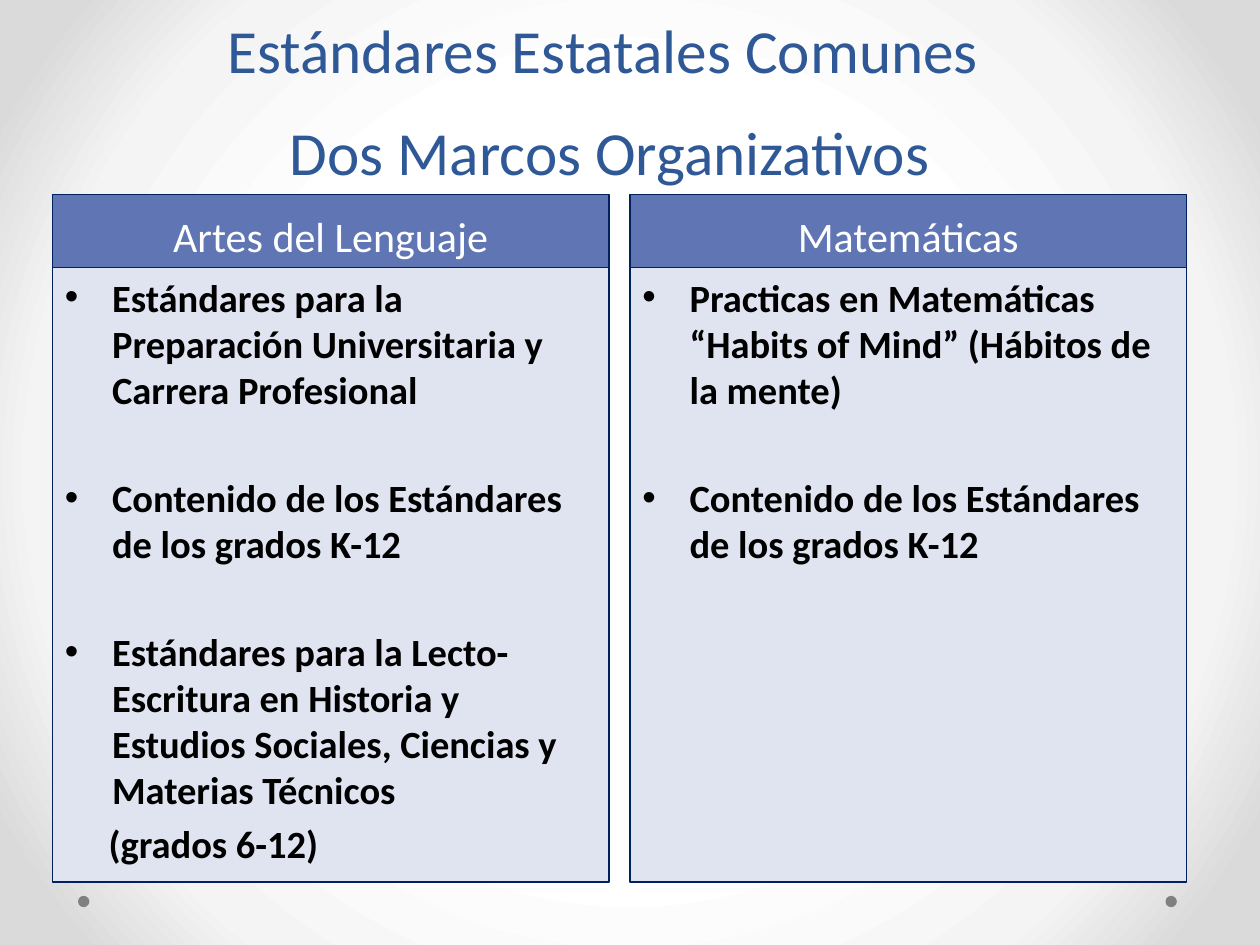
import pptx
import pptx.dml.color
import pptx.enum.shapes
import pptx.enum.text
import pptx.oxml
import pptx.oxml.ns
import pptx.util
from lxml import etree

Pt = pptx.util.Pt
SHAPE = pptx.enum.shapes.MSO_SHAPE
ANCHOR = pptx.enum.text.MSO_ANCHOR
ALIGN = pptx.enum.text.PP_ALIGN

FONT = "Calibri"
NAVY = "002060"
HEAD_H = 41.8
HANG = 27
LINE_GAP, ITEM_GAP = 4.4, 35.2

# Each item: text, bulleted, space before
COLUMNS = [
    ("Artes del Lenguaje", [
        ("Estándares para la Preparación Universitaria y Carrera Profesional", True, LINE_GAP),
        ("Contenido de los Estándares de los grados K-12", True, ITEM_GAP),
        ("Estándares para la Lecto-Escritura en Historia y Estudios Sociales, "
         "Ciencias y Materias Técnicos", True, ITEM_GAP),
        ("(grados 6-12)", False, LINE_GAP),
    ]),
    ("Matemáticas", [
        ("Practicas en Matemáticas “Habits of Mind” (Hábitos de la mente)", True, LINE_GAP),
        ("Contenido de los Estándares de los grados K-12", True, ITEM_GAP),
    ]),
]


def rgb(color):
    return pptx.dml.color.RGBColor.from_string(color)


def set_font(p, size, color, bold=False):
    p.font.name = FONT
    p.font.size = Pt(size)
    p.font.bold = bold
    p.font.color.rgb = rgb(color)


def add_box(s, kind, box, fill, line=None):
    sp = s.shapes.add_shape(kind, *(Pt(v) for v in box))
    sp.shadow.inherit = False
    sp.fill.solid()
    sp.fill.fore_color.rgb = rgb(fill)
    if line:
        sp.line.color.rgb = rgb(line)
        sp.line.width = Pt(0.75)
    else:
        sp.line.fill.background()
    return sp


def set_background(s):
    # Radial gradient, white in the centre
    stops = "".join(
        f'<a:gs pos="{pos * 1000}"><a:srgbClr val="{color}"/></a:gs>'
        for pos, color in [(50, "FFFFFF"), (76, "F4F4F4"), (92, "DADADA")])
    bg = pptx.oxml.parse_xml(
        f'<p:bg {pptx.oxml.ns.nsdecls("p", "a")}><p:bgPr><a:gradFill rotWithShape="1">'
        f'<a:gsLst>{stops}</a:gsLst><a:path path="circle">'
        '<a:fillToRect l="50000" t="50000" r="50000" b="50000"/></a:path>'
        '</a:gradFill><a:effectLst/></p:bgPr></p:bg>')
    s.element.cSld.insert(0, bg)


def add_dots(s, box):
    # One dot at each end of the box
    x, y, w, size = box
    for left in (x, x + w - size):
        add_box(s, SHAPE.OVAL, (left, y, size, size), "808080")


def add_title(s, box):
    sp = s.shapes.add_textbox(*(Pt(v) for v in box))
    tf = sp.text_frame
    tf.word_wrap = True
    tf.vertical_anchor = ANCHOR.BOTTOM
    p = tf.paragraphs[0]
    p.text = "Estándares Estatales Comunes \vDos Marcos Organizativos"
    p.alignment = ALIGN.CENTER
    p.line_spacing = Pt(58)
    set_font(p, 35, "2F5897")


def set_indent(p, bulleted):
    pPr = p._p.get_or_add_pPr()
    pPr.set("marL", str(Pt(HANG if bulleted else 25)))
    pPr.set("indent", str(Pt(-HANG if bulleted else 0)))
    if bulleted:
        ns = pptx.oxml.ns.qn
        font = etree.Element(ns("a:buFont"), typeface="Arial")
        char = etree.Element(ns("a:buChar"), char="•")
        # Bullets come after the spacing and before the default run properties
        pPr.find(ns("a:defRPr")).addprevious(font)
        font.addnext(char)


def add_column(s, box, heading, items):
    x, y, w, h = box
    # Heading
    head = add_box(s, SHAPE.RECTANGLE, (x, y, w, HEAD_H), "6076B4", NAVY)
    head.text_frame.word_wrap = True
    head.text_frame.vertical_anchor = ANCHOR.BOTTOM
    p = head.text_frame.paragraphs[0]
    p.text = heading
    p.alignment = ALIGN.CENTER
    p.space_before = Pt(4.8)
    set_font(p, 24, "FFFFFF")
    # List
    body = add_box(s, SHAPE.RECTANGLE, (x, y + HEAD_H, w, h - HEAD_H), "DFE4F0", NAVY)
    tf = body.text_frame
    tf.word_wrap = True
    tf.vertical_anchor = ANCHOR.TOP
    for i, (text, bulleted, gap) in enumerate(items):
        p = tf.add_paragraph() if i else tf.paragraphs[0]
        p.text = text
        p.alignment = ALIGN.LEFT
        p.space_before = Pt(gap)
        set_font(p, 22, "000000", bold=True)
        set_indent(p, bulleted)


def main():
    prs = pptx.Presentation()
    prs.slide_width, prs.slide_height = Pt(720), Pt(540)
    s = prs.slides.add_slide(prs.slide_layouts[6])
    set_background(s)
    add_dots(s, (44.6, 511.9, 627.9, 6.5))
    add_title(s, (24.5, 12.2, 648, 98.6))
    for i, (heading, items) in enumerate(COLUMNS):
        add_column(s, (30 + i * 330, 111, 318, 393), heading, items)
    prs.save("out.pptx")


if __name__ == "__main__":
    main()
